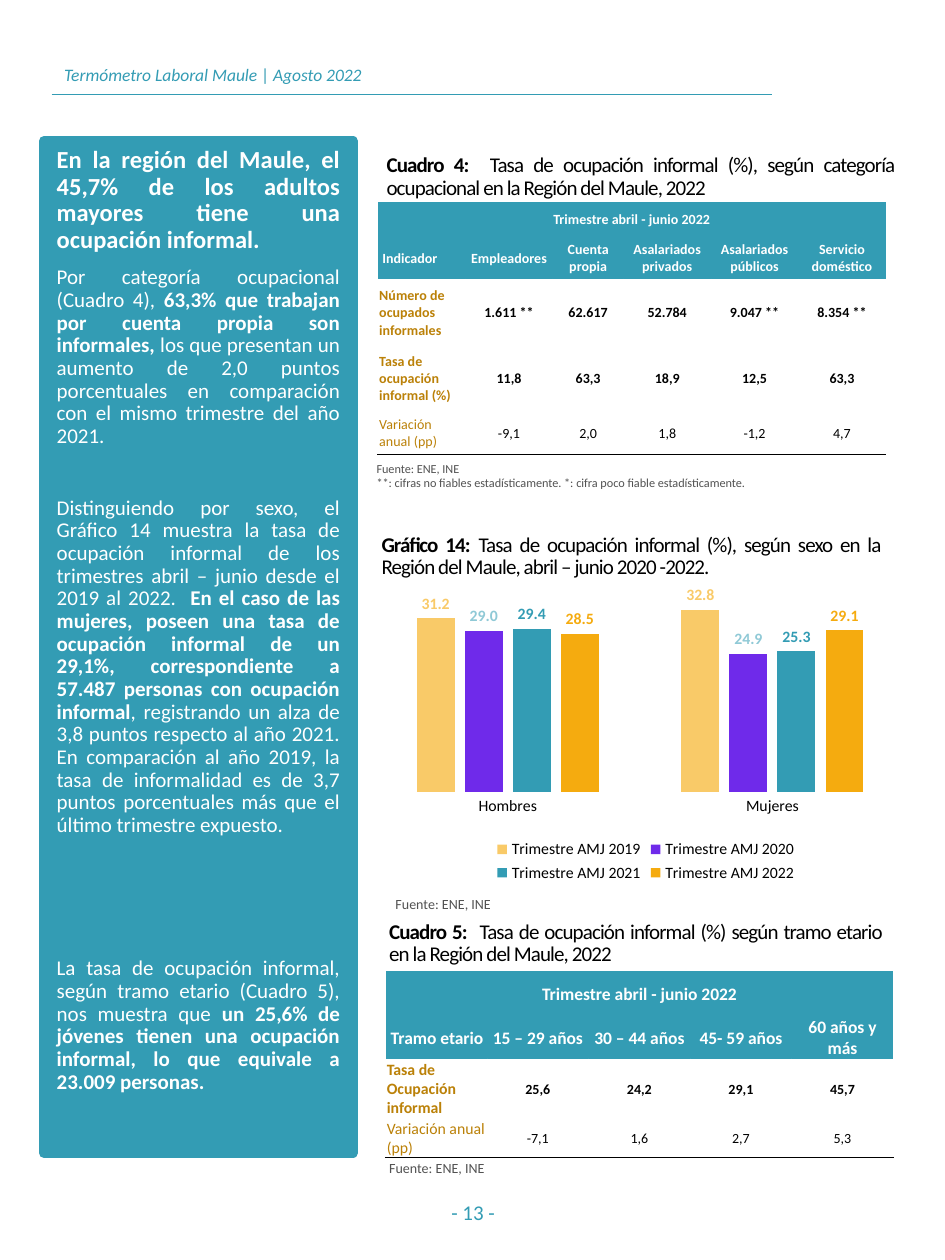
from dataclasses import dataclass

from lxml.etree import SubElement
from pptx import Presentation
from pptx.chart.data import CategoryChartData
from pptx.dml.color import RGBColor
from pptx.enum.chart import XL_CHART_TYPE as ChartType, XL_LABEL_POSITION as LabelPosition
from pptx.enum.chart import XL_LEGEND_POSITION as LegendPosition, XL_TICK_MARK as TickMark
from pptx.enum.shapes import MSO_CONNECTOR as Connector
from pptx.enum.text import MSO_ANCHOR as Anchor, MSO_AUTO_SIZE as AutoSize, PP_ALIGN as Align
from pptx.oxml import parse_xml
from pptx.oxml.ns import nsdecls, qn
from pptx.util import Inches, Pt

FONT = "Calibri"
COLORS = {"teal": "339CB4", "white": "FFFFFF", "black": "000000", "gray": "525252",
          "ochre": "BB8108", "sand": "F9CA68", "violet": "6F2AEA", "sky": "8FC9D6",
          "amber": "F5AB0F"}
UNIT = 0.05  # the page is a grid of 150 columns by 200 rows
NO_STYLE = "{2D5ABB26-0587-4C30-8999-92F81FD0307C}"


@dataclass
class Box:
    """Place on the grid, in columns and rows."""
    column: float
    row: float
    columns: float
    rows: float

    def lengths(self) -> tuple:
        return tuple(Inches(n * UNIT) for n in (self.column, self.row, self.columns, self.rows))


@dataclass
class Run:
    text: str
    bold: bool = False
    italic: bool = False


@dataclass
class Block:
    """A paragraph with its own type size and space before."""
    runs: list
    size: float
    before: float = 0
    align: Align = Align.JUSTIFY
    line_spacing: float = 0.9
    tracking: float = 0


@dataclass
class TableData:
    box: Box
    weights: list
    heights: list
    rows: list
    sizes: tuple  # header, row label, value
    body_fill: str = ""


@dataclass
class Series:
    name: str
    values: tuple
    color: str
    label_color: str


def rgb(name: str) -> RGBColor:
    return RGBColor.from_string(COLORS[name])


def style(font, size: float, color: str, bold: bool = False, italic: bool = False) -> None:
    font.name, font.size, font.bold, font.italic = FONT, Pt(size), bold, italic
    font.color.rgb = rgb(color)


def write(shape, blocks: list, color: str, anchor=Anchor.TOP) -> None:
    frame = shape.text_frame
    frame.word_wrap, frame.auto_size, frame.vertical_anchor = True, AutoSize.NONE, anchor
    for index, block in enumerate(blocks):
        paragraph = frame.paragraphs[0] if index == 0 else frame.add_paragraph()
        properties = paragraph._p.get_or_add_pPr()
        properties.set("marL", "0")
        properties.set("indent", "0")
        SubElement(properties, qn("a:buNone"))
        paragraph.alignment, paragraph.line_spacing = block.align, block.line_spacing
        paragraph.space_before = Pt(block.before)
        for part in block.runs:
            run = paragraph.add_run()
            run.text = part.text
            style(run.font, block.size, color, part.bold, part.italic)
            if block.tracking:
                run._r.get_or_add_rPr().set("spc", str(int(block.tracking * 100)))


def place(shape, box: Box) -> None:
    shape.left, shape.top, shape.width, shape.height = box.lengths()


def add_text(slide, box: Box, blocks: list, color: str, anchor=Anchor.TOP) -> None:
    write(slide.shapes.add_textbox(*box.lengths()), blocks, color, anchor)


def add_caption(slide, box: Box, label: str, text: str) -> None:
    add_text(slide, box, [Block([Run(label, True), Run(text)], 12, tracking=-0.5)], "black")


def add_source(slide, box: Box, size: float, *lines: str) -> None:
    add_text(slide, box, [Block([Run(line)], size, 0, Align.LEFT, 1) for line in lines], "gray")


def set_borders(cell, bottom: str) -> None:
    properties = cell._tc.get_or_add_tcPr()
    for index, side in enumerate("LRTB"):
        color = COLORS[bottom if side == "B" else "white"]
        properties.insert(index, parse_xml(
            f'<a:ln{side} {nsdecls("a")} w="12700"><a:solidFill><a:srgbClr val="{color}"/>'
            f'</a:solidFill></a:ln{side}>'))


def add_table(slide, data: TableData) -> None:
    row_count, column_count = len(data.rows), len(data.weights)
    frame = slide.shapes.add_table(row_count, column_count, *data.box.lengths())
    table = frame.table
    table.first_row = table.horz_banding = False
    table._tbl.tblPr.find(qn("a:tableStyleId")).text = NO_STYLE
    for column, weight in zip(table.columns, data.weights):
        column.width = Inches(data.box.columns * UNIT * weight / sum(data.weights))
    for row, height in zip(table.rows, data.heights):
        row.height = Inches(height * UNIT)
    table.cell(0, 0).merge(table.cell(0, column_count - 1))
    for r in range(row_count):
        for c in range(column_count):
            cell, header, last = table.cell(r, c), r < 2, r == row_count - 1
            cell.margin_left = cell.margin_right = cell.margin_top = Inches(0.01)
            cell.margin_bottom = 0
            cell.vertical_anchor = Anchor.MIDDLE
            if header or data.body_fill:
                cell.fill.solid()
                cell.fill.fore_color.rgb = rgb("teal" if header else data.body_fill)
            else:
                cell.fill.background()
            if not header:
                set_borders(cell, "black" if last else "white")
            if c >= len(data.rows[r]):
                continue
            cell.text = data.rows[r][c]
            paragraph = cell.text_frame.paragraphs[0]
            paragraph.alignment = Align.LEFT if c == 0 and r > 0 else Align.CENTER
            kind = 0 if header else 1 if c == 0 else 2
            style(paragraph.runs[0].font, data.sizes[kind], ("white", "ochre", "black")[kind], not last)


def add_chart(slide, box: Box, categories: list, series_list: list) -> None:
    data = CategoryChartData(number_format="#,##0.0")
    data.categories = categories
    for item in series_list:
        data.add_series(item.name, item.values)
    chart = slide.shapes.add_chart(ChartType.COLUMN_CLUSTERED, *box.lengths(), data).chart
    style(chart.font, 10, "black")
    chart.has_title = False
    chart.has_legend = True
    chart.legend.position, chart.legend.include_in_layout = LegendPosition.BOTTOM, False
    style(chart.legend.font, 9, "black")
    values, names = chart.value_axis, chart.category_axis
    values.minimum_scale, values.maximum_scale = 0, 35
    values.has_major_gridlines = values.visible = False
    names.major_tick_mark = TickMark.NONE
    names.format.line.fill.background()
    style(names.tick_labels.font, 9, "black")
    plot = chart.plots[0]
    plot.gap_width, plot.overlap, plot.vary_by_categories = 219, -27, False
    for item, series in zip(series_list, plot.series):
        series.format.fill.solid()
        series.format.fill.fore_color.rgb = rgb(item.color)
        labels = series.data_labels
        labels.show_value, labels.position = True, LabelPosition.OUTSIDE_END
        labels.number_format, labels.number_format_is_linked = "#,##0.0", False
        style(labels.font, 9, item.label_color, True)
    # Fixed inner plot area, as shares of the chart
    area = chart._chartSpace.chart.plotArea
    for old in area.findall(qn("c:layout")):
        area.remove(old)
    layout = SubElement(area, qn("c:layout"))
    area.insert(0, layout)
    manual = SubElement(layout, qn("c:manualLayout"))
    for tag, value in (("layoutTarget", "inner"), ("xMode", "edge"), ("yMode", "edge"),
                       ("x", "0.02"), ("y", "0.05"), ("w", "0.94"), ("h", "0.64")):
        SubElement(manual, qn(f"c:{tag}")).set("val", value)


PANEL = [
    Block([Run("En la región del Maule, el 45,7% de los adultos mayores tiene una ocupación informal.", True)], 14),
    Block([Run("Por categoría ocupacional (Cuadro 4), "),
           Run("63,3% que trabajan por cuenta propia son informales, ", True),
           Run("los que presentan un aumento de 2,0 puntos porcentuales en comparación con el mismo "
               "trimestre del año 2021.")], 12, 7.5),
    Block([Run("Distinguiendo por sexo, el Gráfico 14 muestra la tasa de ocupación informal de los "
               "trimestres abril – junio desde el 2019 al 2022.  "),
           Run("En el caso de las mujeres, poseen una tasa de ocupación informal de un 29,1%, "
               "correspondiente a 57.487 personas con ocupación informal", True),
           Run(", registrando un alza de 3,8 puntos respecto al año 2021. En comparación al año 2019, "
               "la tasa de informalidad es de 3,7 puntos porcentuales más que el último trimestre "
               "expuesto.")], 12, 28),
    Block([Run("La tasa de ocupación informal, según tramo etario (Cuadro 5), nos muestra que "),
           Run("un 25,6% de jóvenes tienen una ocupación informal, lo que equivale a 23.009 personas.",
               True)], 12, 69)]
PERIOD = ["Trimestre abril - junio 2022"]
BY_CATEGORY = TableData(
    Box(60, 32, 80.6, 40.2), [69, 69, 56, 69, 69, 69], [5.4, 7, 10.4, 10.4, 7],
    [PERIOD,
     [" Indicador", "Empleadores", "Cuenta propia", "Asalariados privados", "Asalariados públicos",
      "Servicio doméstico"],
     ["Número de ocupados informales", "1.611 **", "62.617", "52.784", "9.047 **", "8.354 **"],
     ["Tasa de ocupación informal (%)", "11,8", "63,3", "18,9", "12,5", "63,3"],
     ["Variación anual (pp)", "-9,1", "2,0", "1,8", "-1,2", "4,7"]], (8, 8, 8))
BY_AGE = TableData(
    Box(61.2, 154.2, 80.6, 29.2), [1] * 5, [7, 6.2, 9, 6],
    [PERIOD,
     [" Tramo etario", "15 – 29 años", "30 – 44 años", "45- 59 años", "60 años y más"],
     ["Tasa de Ocupación informal", "25,6", "24,2", "29,1", "45,7"],
     ["Variación anual (pp)", "-7,1", "1,6", "2,7", "5,3"]], (10, 9, 8), "white")
BY_SEX = [Series("Trimestre AMJ 2019", (31.2, 32.8), "sand", "sand"),
          Series("Trimestre AMJ 2020", (29, 24.9), "violet", "sky"),
          Series("Trimestre AMJ 2021", (29.4, 25.3), "teal", "teal"),
          Series("Trimestre AMJ 2022", (28.5, 29.1), "amber", "amber")]


def main() -> None:
    presentation = Presentation()
    presentation.slide_width, presentation.slide_height = Inches(150 * UNIT), Inches(200 * UNIT)
    slide = presentation.slides.add_slide(presentation.slide_layouts[1])
    title, panel = slide.placeholders

    # Running header and page number
    rule = slide.shapes.add_connector(Connector.STRAIGHT, *(Inches(n * UNIT) for n in (8.2, 15, 122.6, 15)))
    rule.line.color.rgb, rule.line.width = rgb("teal"), Pt(1)
    SubElement(rule._element.spPr, qn("a:effectLst"))
    place(title, Box(8.2, 9.2, 64, 5.4))
    write(title, [Block([Run("Termómetro Laboral Maule ", italic=True), Run("| "),
                         Run("Agosto 2022", italic=True)], 10, 0, Align.LEFT, 1)], "teal")
    add_text(slide, Box(59.4, 189.2, 31.4, 6.2), [Block([Run("- 13 -")], 12, 0, Align.CENTER, 1)],
             "teal", Anchor.BOTTOM)

    # Commentary panel
    place(panel, Box(7, 22.4, 49, 160.6))
    panel.fill.solid()
    panel.fill.fore_color.rgb = panel.line.color.rgb = rgb("teal")
    panel.line.width = Pt(6)
    write(panel, PANEL, "white")

    # Table by occupational category
    add_caption(slide, Box(59.4, 23.6, 84.6, 9.2), "Cuadro 4: ",
                " Tasa de ocupación informal (%), según categoría ocupacional en la Región del Maule, 2022")
    add_table(slide, BY_CATEGORY)
    add_source(slide, Box(57.8, 72.2, 86, 6.8), 7, "Fuente: ENE, INE",
               "**: cifras no fiables estadísticamente. *: cifra poco fiable estadísticamente.")

    # Chart by sex
    add_caption(slide, Box(58.6, 83.8, 83.2, 9.2), "Gráfico 14: ",
                "Tasa de ocupación informal (%), según sexo en la Región del Maule, abril – junio 2020 -2022.")
    add_chart(slide, Box(57.8, 92.4, 89.4, 48.4), ["Hombres", "Mujeres"], BY_SEX)
    add_source(slide, Box(60.8, 141.2, 32.2, 4.8), 8, "Fuente: ENE, INE")

    # Table by age group
    add_caption(slide, Box(59.8, 145.2, 82.2, 9.2), "Cuadro 5: ",
                " Tasa de ocupación informal (%) según tramo etario en la Región del Maule, 2022")
    add_table(slide, BY_AGE)
    add_source(slide, Box(59.8, 183, 32.2, 4.8), 8, "Fuente: ENE, INE")
    presentation.save("out.pptx")


if __name__ == "__main__":
    main()
